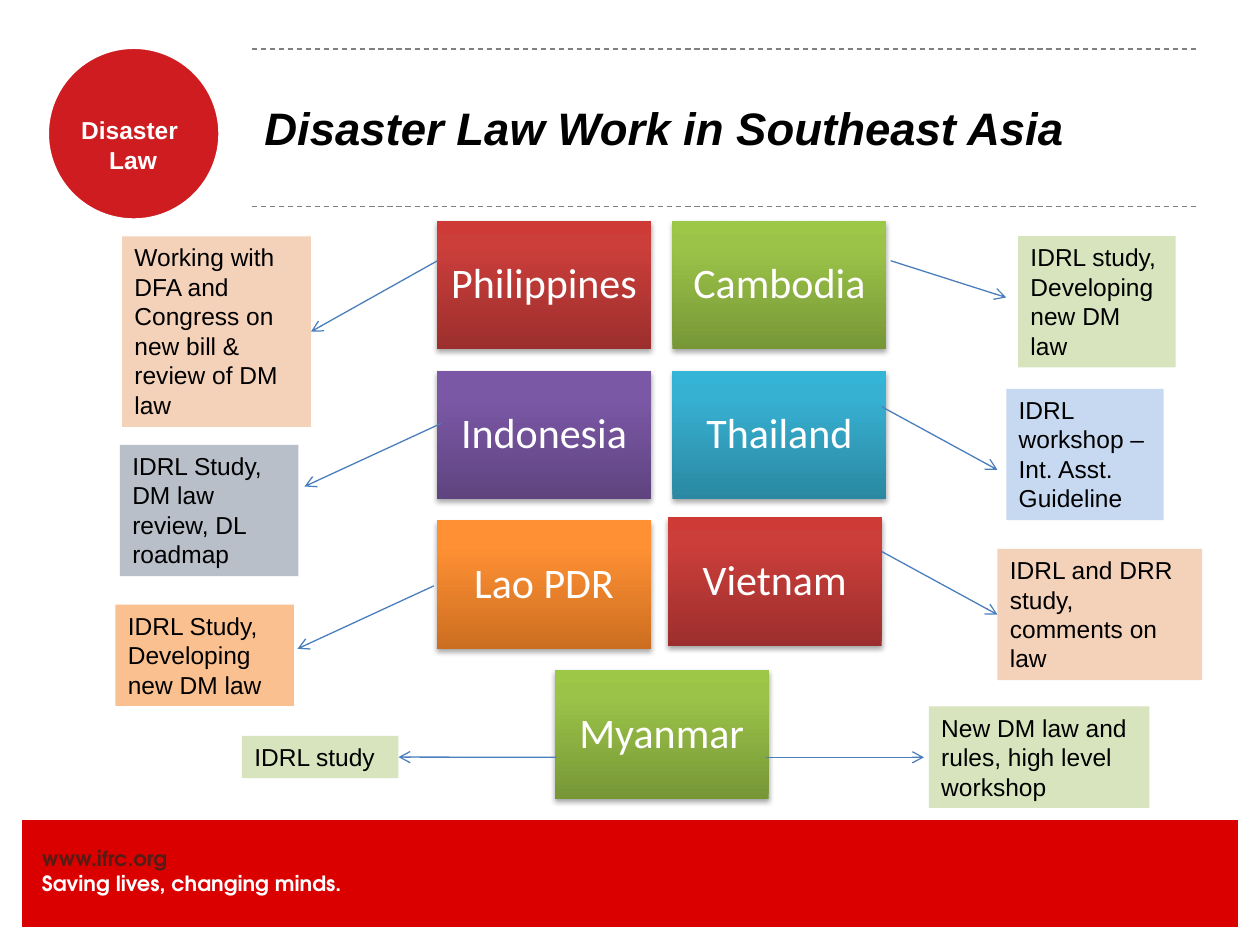
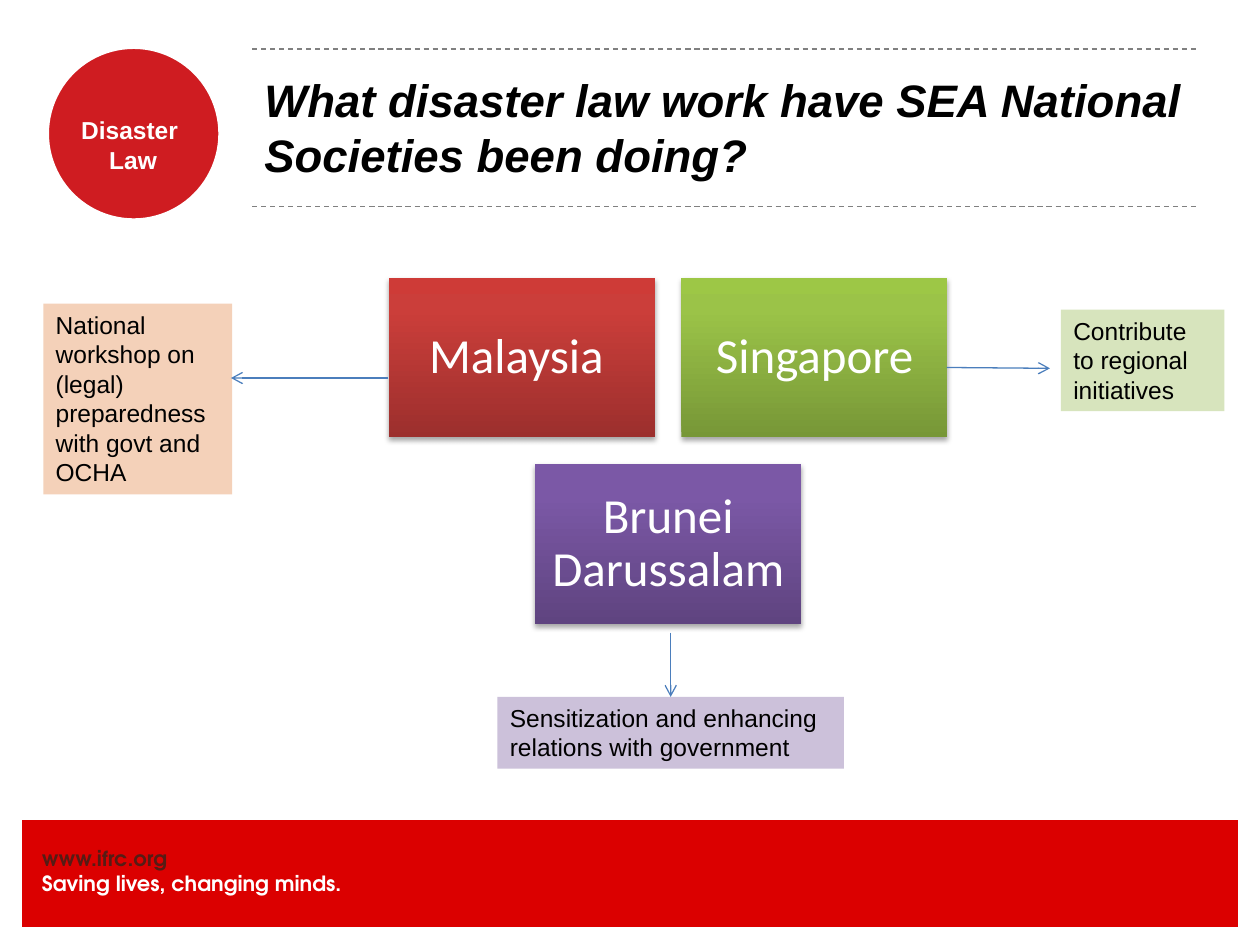
from copy import deepcopy

from lxml.etree import SubElement
from pptx import Presentation
from pptx.dml.color import RGBColor
from pptx.enum.dml import MSO_LINE as Dash
from pptx.enum.shapes import MSO_CONNECTOR as Link, MSO_SHAPE as Kind
from pptx.enum.text import MSO_ANCHOR as Anchor, MSO_AUTO_SIZE as Fit, PP_ALIGN as Align
from pptx.oxml.ns import qn
from pptx.util import Pt

WHITE = RGBColor(0xFF, 0xFF, 0xFF)
BLACK = RGBColor(0, 0, 0)
BAND = RGBColor(0xDB, 0, 0)
BADGE = RGBColor(0xCF, 0x1C, 0x21)
MAROON = RGBColor(0x55, 0x1C, 0x15)
GREY = RGBColor(0x80, 0x80, 0x80)
ARROW = RGBColor(0x4B, 0x7E, 0xBC)

PEACH = RGBColor(0xF4, 0xD1, 0xB9)
SLATE = RGBColor(0xB9, 0xBF, 0xC9)
APRICOT = RGBColor(0xFA, 0xC0, 0x90)
MINT = RGBColor(0xD7, 0xE4, 0xBD)
SKY = RGBColor(0xC6, 0xD9, 0xF1)
LILAC = RGBColor(0xCC, 0xC1, 0xDA)

RED = RGBColor(0x9C, 0x2F, 0x2D), RGBColor(0xCB, 0x3E, 0x3A), RGBColor(0xCE, 0x3B, 0x37)
GREEN = RGBColor(0x77, 0x97, 0x37), RGBColor(0x9B, 0xC3, 0x48), RGBColor(0x9D, 0xC7, 0x46)
PURPLE = RGBColor(0x5F, 0x44, 0x80), RGBColor(0x7B, 0x58, 0xA6), RGBColor(0x7C, 0x57, 0xA8)
TEAL = RGBColor(0x2A, 0x88, 0xA2), RGBColor(0x37, 0xB1, 0xD2), RGBColor(0x34, 0xB4, 0xD6)
ORANGE = RGBColor(0xCC, 0x6E, 0x20), RGBColor(0xFF, 0x90, 0x34), RGBColor(0xFF, 0x91, 0x36)

TOP, LEFT, RIGHT = 0, 1, 3


class Deck:
    font = "Arial"
    tile_font = "Calibri"
    foot_font = "TeX Gyre Adventor"

    def __init__(self):
        self.prs = Presentation()
        self.prs.slide_width, self.prs.slide_height = Pt(720), Pt(540)
        self.slide = None

    def start(self, title):
        self.slide = self.prs.slides.add_slide(self.prs.slide_layouts[6])
        self.shape(Kind.RECTANGLE, (12.5, 468.5, 695.5, 61.5), BAND, 0.75)
        foot = self.text((24, 483, 246, 29), "www.ifrc.org\nSaving lives, changing minds.",
                         12, WHITE, self.foot_font, bold=True)
        foot.paragraphs[0].runs[0].font.color.rgb = MAROON
        self.shape(Kind.OVAL, (26.75, 26.75, 99.25, 99.25), BADGE, 2.5)
        self.text((31, 66, 90, 34), "Disaster \nLaw", 14, WHITE, bold=True, align=Align.CENTER)
        for y in (28, 118):
            self.line((144, y), (684, y), GREY).line.dash_style = Dash.DASH
        self.text((144, 27.5, 540, 90), title, 26, BLACK, bold=True, italic=True,
                  inset=(7.2, 3.6), anchor=Anchor.MIDDLE)

    def shape(self, kind, area, fill=None, edge=0):
        item = self.slide.shapes.add_shape(kind, *map(Pt, area))
        item.shadow.inherit = False
        if fill is not None:
            item.fill.solid()
            item.fill.fore_color.rgb = fill
        if edge:
            item.line.color.rgb = WHITE
            item.line.width = Pt(edge)
        else:
            item.line.fill.background()
        return item

    def letter(self, frame, text, size, color, font=None, bold=False, italic=False,
               align=Align.LEFT, inset=(0, 0), anchor=Anchor.TOP):
        frame.text = text
        frame.word_wrap = True
        frame.vertical_anchor = anchor
        frame.margin_left = frame.margin_right = Pt(inset[0])
        frame.margin_top = frame.margin_bottom = Pt(inset[1])
        for para in frame.paragraphs:
            para.alignment = align
            for run in para.runs:
                face = run.font
                face.name, face.size = font or self.font, Pt(size)
                face.bold, face.italic = bold, italic
                face.color.rgb = color
        return frame

    def text(self, area, *words, **style):
        box = self.slide.shapes.add_textbox(*map(Pt, area))
        return self.letter(box.text_frame, *words, **style)

    def tile(self, area, text, size, shades):
        item = self.shape(Kind.RECTANGLE, area)
        item.fill.gradient()
        item.fill.gradient_angle = 90
        stops = item.element.spPr.find(".//" + qn("a:gsLst"))
        stops.insert(1, deepcopy(stops[0]))
        for stop, place, shade in zip(item.fill.gradient_stops, (0, 0.8, 1), shades):
            stop.position = place
            stop.color.rgb = shade
        glow = SubElement(item.element.spPr.find(qn("a:effectLst")), qn("a:outerShdw"),
                          blurRad=str(Pt(3.1)), dist=str(Pt(1.8)), dir="5400000", rotWithShape="0")
        tint = SubElement(glow, qn("a:srgbClr"), val="000000")
        SubElement(tint, qn("a:alpha"), val="35000")
        frame = self.letter(item.text_frame, text, size, WHITE, self.tile_font, align=Align.CENTER,
                            inset=(size * 0.3, size * 0.3), anchor=Anchor.MIDDLE)
        frame.paragraphs[0].line_spacing = 0.9

    def grid(self, left, top, width, size, tiles):
        height, gap = width * 0.6, width * 0.1
        for text, col, row, shades in tiles:
            x = left + col * (width + gap)
            y = top + row * (height + gap)
            self.tile((x, y, width, height), text, size, shades)

    def note(self, area, text, fill):
        item = self.shape(Kind.RECTANGLE, area, fill)
        self.letter(item.text_frame, text, 14, BLACK, inset=(7.2, 3.6))
        item.text_frame.auto_size = Fit.SHAPE_TO_FIT_TEXT
        return item

    def line(self, start, end, color):
        item = self.slide.shapes.add_connector(Link.STRAIGHT, *map(Pt, start + end))
        item.line.color.rgb = color
        item.line.width = Pt(0.75)
        SubElement(item.element.spPr, qn("a:effectLst"))
        return item

    def arrow(self, start, end, note=None, side=None):
        item = self.line(start, end, ARROW)
        SubElement(item.element.spPr.find(qn("a:ln")), qn("a:tailEnd"), type="arrow")
        if note is not None:
            item.end_connect(note, side)


def main():
    deck = Deck()

    deck.start("Disaster Law Work in Southeast Asia")
    deck.grid(249.75, 126.25, 122.25, 24, [
        ("Philippines", 0, 0, RED),
        ("Cambodia", 1, 0, GREEN),
        ("Indonesia", 0, 1, PURPLE),
        ("Thailand", 1, 1, TEAL),
        ("Lao PDR", 0, 2, ORANGE),
        ("Vietnam", 0.98, 1.98, RED),
        ("Myanmar", 0.5, 3, GREEN),
    ])
    bill = deck.note((69.75, 135, 108, 109),
                     "Working with DFA and Congress on new bill & review of DM law", PEACH)
    deck.note((68.5, 254.25, 102, 75), "IDRL Study, DM law review, DL roadmap", SLATE)
    deck.note((66, 345.5, 102, 58), "IDRL Study,\nDeveloping new DM law", APRICOT)
    deck.note((581.75, 135, 90, 75), "IDRL study, Developing new DM law", MINT)
    deck.note((575, 222.25, 90, 75), "IDRL workshop – Int. Asst. Guideline", SKY)
    drr = deck.note((570, 313.75, 117, 75), "IDRL and DRR study, comments on law", PEACH)
    study = deck.note((138.25, 420.5, 89.5, 24.25), "IDRL study", MINT)
    deck.note((530.75, 403.75, 126, 58), "New DM law and rules, high level workshop", MINT)
    deck.arrow((250, 149), (178, 190), bill, RIGHT)
    deck.arrow((252, 242), (174, 278))
    deck.arrow((248, 334.75), (170, 370.75))
    deck.arrow((509, 149), (575, 170))
    deck.arrow((504, 232.5), (570, 268.5))
    deck.arrow((504, 315.25), (570, 351.25), drr, LEFT)
    deck.arrow((318, 432.75), (228, 432.75), study, RIGHT)
    deck.arrow((438, 432.75), (528, 432.75))

    deck.start("What disaster law work have SEA National Societies been doing?")
    deck.grid(222.25, 158.75, 152, 28, [
        ("Malaysia ", 0, 0, RED),
        ("Singapore", 1, 0, GREEN),
        ("Brunei Darussalam ", 0.5, 1, PURPLE),
    ])
    deck.note((24.75, 173.5, 108, 109),
              "National workshop on (legal) preparedness with govt and OCHA", PEACH)
    deck.note((606.25, 177, 93.5, 58), "Contribute to regional initiatives", MINT)
    ties = deck.note((284.25, 398.25, 198, 41),
                     "Sensitization and enhancing relations with government", LILAC)
    deck.arrow((222, 216), (132, 216))
    deck.arrow((541, 210), (600, 210.5))
    deck.arrow((383.25, 361.5), (383.25, 397.5), ties, TOP)

    deck.prs.save("out.pptx")


if __name__ == "__main__":
    main()
